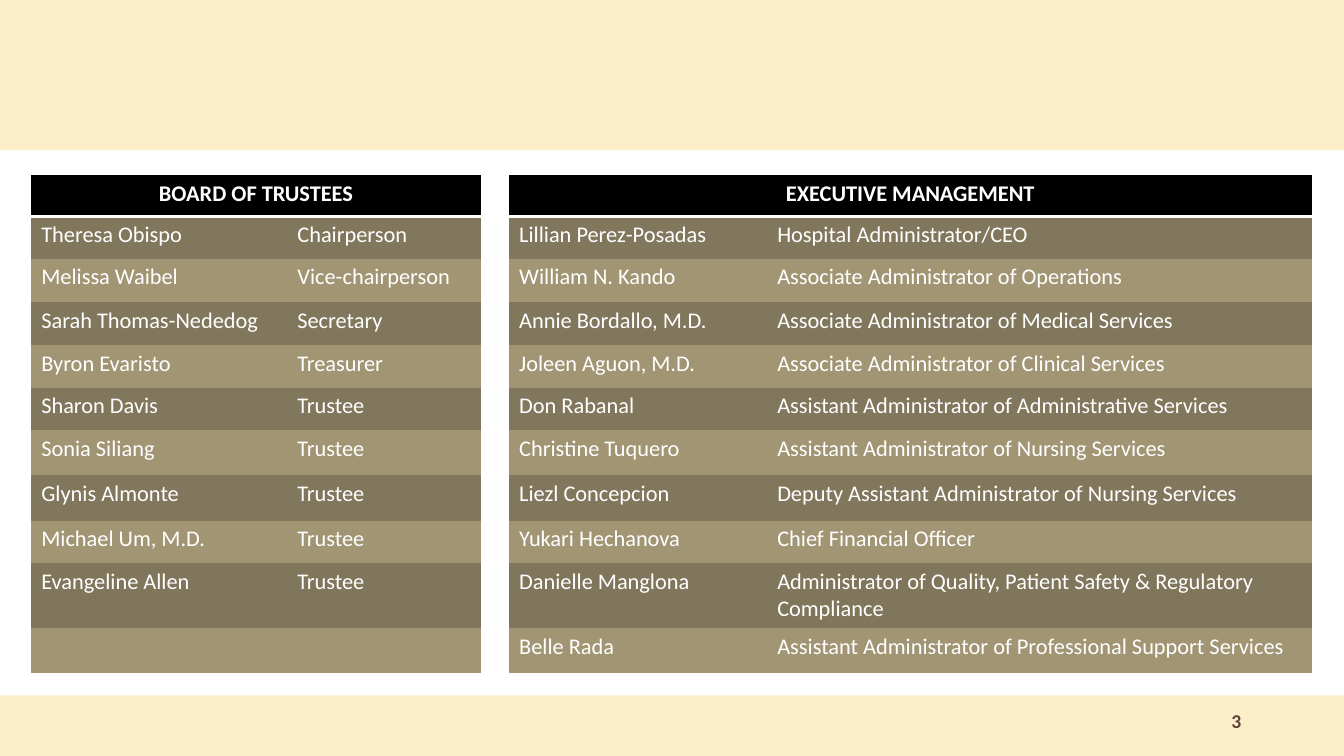
import dataclasses

import lxml.etree
import pptx
import pptx.dml.color
import pptx.enum.shapes
import pptx.enum.text
import pptx.oxml.ns
import pptx.util

EMU_PER_PX = 9144
PLAIN_TABLE_STYLE = "{2D5ABB26-0587-4C30-8999-92F81FD0307C}"
ALIGN = pptx.enum.text.PP_ALIGN


@dataclasses.dataclass(frozen=True)
class Theme:
    font: str = "Calibri"
    band: str = "FBEEC9"
    header: str = "000000"
    odd_row: str = "81775D"
    even_row: str = "A19574"
    deep_row: str = "7F765B"
    light: str = "FFFFFF"
    number: str = "624139"
    table_size: int = 16
    number_size: int = 14


def px(length):
    return pptx.util.Emu(length * EMU_PER_PX)


def rgb(color):
    return pptx.dml.color.RGBColor.from_string(color)


class SlideBuilder:
    def __init__(self, page, theme):
        self.page = page
        self.theme = theme

    def span(self, para, text, size, color, bold=False):
        span = para.add_run()
        span.text = text
        span.font.name = self.theme.font
        span.font.size = pptx.util.Pt(size)
        span.font.bold = bold
        span.font.color.rgb = rgb(color)

    def band(self, top, height):
        shape = self.page.shapes.add_shape(
            pptx.enum.shapes.MSO_SHAPE.RECTANGLE, 0, px(top), px(WIDTH), px(height))
        shape.shadow.inherit = False
        shape.fill.solid()
        shape.fill.fore_color.rgb = rgb(self.theme.band)
        shape.line.fill.background()

    def page_number(self, text, left, top, width, height):
        box = self.page.shapes.add_textbox(px(left), px(top), px(width), px(height))
        frame = box.text_frame
        frame.word_wrap = True
        frame.vertical_anchor = pptx.enum.text.MSO_ANCHOR.MIDDLE
        para = frame.paragraphs[0]
        para.alignment = ALIGN.RIGHT
        self.span(para, text, self.theme.number_size, self.theme.number, bold=True)

    def table(self, left, top, columns, heights):
        frame = self.page.shapes.add_table(
            len(heights), len(columns), px(left), px(top), px(sum(columns)), px(sum(heights)))
        style = next(frame.element.iter(pptx.oxml.ns.qn("a:tableStyleId")))
        style.text = PLAIN_TABLE_STYLE
        table = frame.table
        table.first_row = False
        table.horz_banding = False
        for column, width in zip(table.columns, columns):
            column.width = px(width)
        for row, height in zip(table.rows, heights):
            row.height = px(height)
        return table

    def cell(self, cell, text, fill, bold=False, align=ALIGN.LEFT):
        cell.fill.solid()
        cell.fill.fore_color.rgb = rgb(fill)
        if text:
            para = cell.text_frame.paragraphs[0]
            para.alignment = align
            self.span(para, text, self.theme.table_size, self.theme.light, bold)

    def rule_below(self, cell, points):
        qn = pptx.oxml.ns.qn
        line = lxml.etree.Element(qn("a:lnB"), w=str(pptx.util.Pt(points)))
        fill = lxml.etree.SubElement(line, qn("a:solidFill"))
        lxml.etree.SubElement(fill, qn("a:srgbClr"), val=self.theme.light)
        cell._tc.get_or_add_tcPr().insert(0, line)

    def roster(self, table, first_column, heading, people):
        theme = self.theme
        header = table.cell(0, first_column)
        header.merge(table.cell(0, first_column + 1))
        self.cell(header, heading, theme.header, True, ALIGN.CENTER)
        for row, person in enumerate(people, 1):
            fill = theme.odd_row if row % 2 else theme.even_row
            if row == DEEP_ROW:
                fill = theme.deep_row
            for offset, text in enumerate(person):
                self.cell(table.cell(row, first_column + offset), text, fill)


WIDTH, HEIGHT = 1333, 750
DEEP_ROW = 9
COLUMNS = [254, 192, 28, 256, 540]
ROW_HEIGHTS = [40, 42, 43, 43, 42, 42, 45, 45, 42, 61, 45, 42]

TRUSTEES = [
    ("Theresa Obispo", "Chairperson"),
    ("Melissa Waibel", "Vice-chairperson"),
    ("Sarah Thomas-Nededog", "Secretary"),
    ("Byron Evaristo", "Treasurer"),
    ("Sharon Davis", "Trustee"),
    ("Sonia Siliang", "Trustee"),
    ("Glynis Almonte", "Trustee"),
    ("Michael Um, M.D.", "Trustee"),
    ("Evangeline Allen", "Trustee"),
    ("", ""),
]
EXECUTIVES = [
    ("Lillian Perez-Posadas", "Hospital Administrator/CEO"),
    ("William N. Kando", "Associate Administrator of Operations"),
    ("Annie Bordallo, M.D.", "Associate Administrator of Medical Services"),
    ("Joleen Aguon, M.D.", "Associate Administrator of Clinical Services"),
    ("Don Rabanal", "Assistant Administrator of Administrative Services"),
    ("Christine Tuquero", "Assistant Administrator of Nursing Services"),
    ("Liezl Concepcion", "Deputy Assistant Administrator of Nursing Services"),
    ("Yukari Hechanova", "Chief Financial Officer"),
    ("Danielle Manglona", "Administrator of Quality, Patient Safety & Regulatory Compliance"),
    ("Belle Rada", "Assistant Administrator of Professional Support Services"),
]


def main():
    deck = pptx.Presentation()
    deck.slide_width = px(WIDTH)
    deck.slide_height = px(HEIGHT)
    page = deck.slides.add_slide(deck.slide_layouts.get_by_name("Blank"))
    builder = SlideBuilder(page, Theme())

    builder.band(690, 60)
    builder.band(-1, 150)

    table = builder.table(31, 174, COLUMNS, ROW_HEIGHTS)
    builder.roster(table, 0, "BOARD OF TRUSTEES", TRUSTEES)
    builder.roster(table, 3, "EXECUTIVE MANAGEMENT", EXECUTIVES)
    for column in range(len(COLUMNS)):
        builder.rule_below(table.cell(0, column), 2)

    builder.page_number("3", 883, 695, 358, 40)
    deck.save("out.pptx")


if __name__ == "__main__":
    main()
